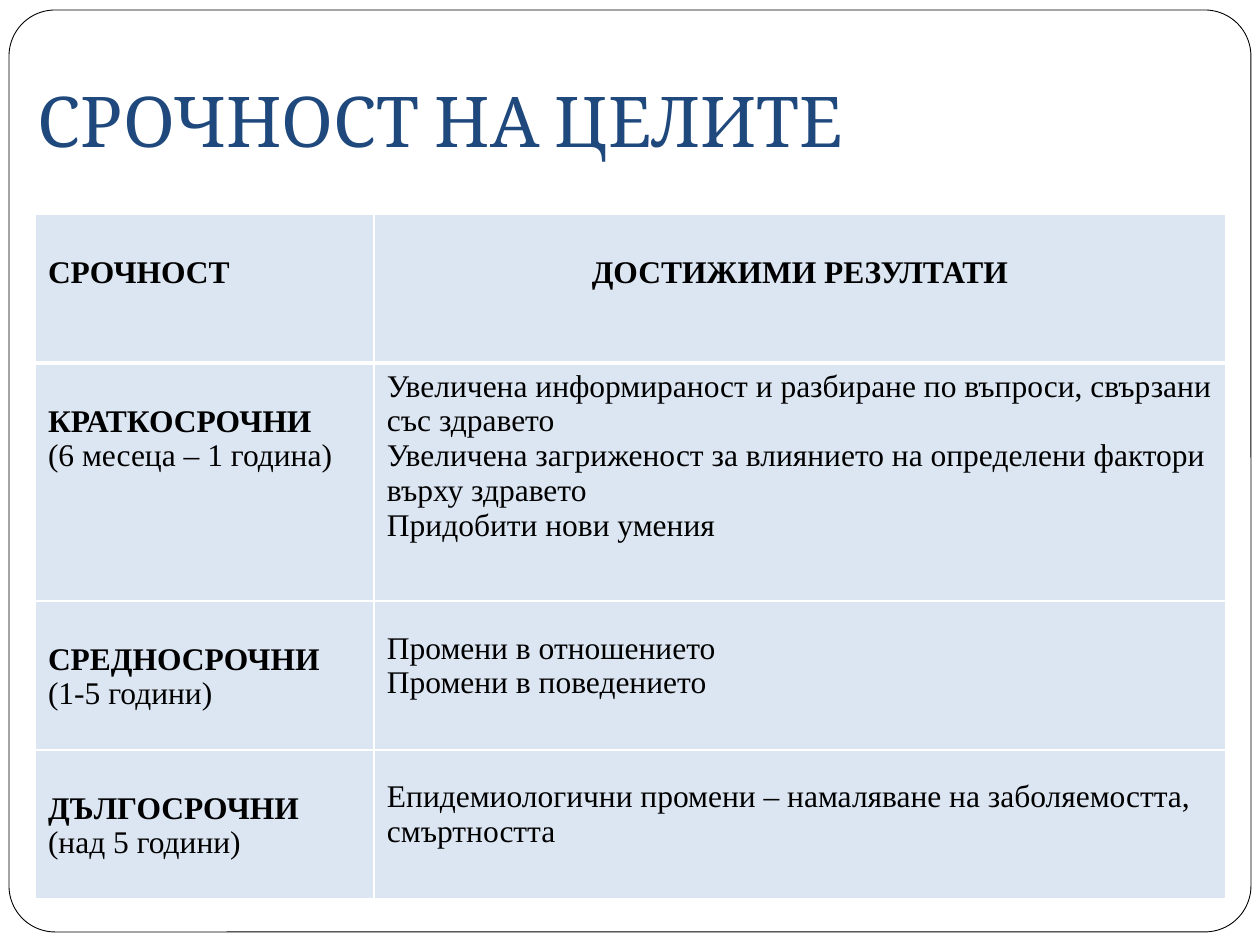
from lxml.etree import SubElement
from pptx import Presentation
from pptx.dml.color import RGBColor
from pptx.enum.shapes import MSO_SHAPE
from pptx.enum.text import MSO_ANCHOR, PP_ALIGN
from pptx.oxml.ns import qn
from pptx.util import Emu, Pt

COLORS = {"white": "FFFFFF", "black": "000000", "title": "1F497D", "cell": "DCE6F2"}


def px(n):
    return Emu(round(n * 914400 / 126))


def add_text(paragraph, text, size, font, color, bold=False):
    run = paragraph.add_run()
    run.text = text
    run.font.size = Pt(size)
    run.font.name = font
    run.font.bold = bold
    run.font.color.rgb = RGBColor.from_string(COLORS[color])


prs = Presentation()
prs.slide_width, prs.slide_height = px(1260), px(945)
slide = prs.slides.add_slide(prs.slide_layouts[6])

# Rounded frame
frame = slide.shapes.add_shape(MSO_SHAPE.ROUNDED_RECTANGLE, px(9), px(10), px(1242), px(922))
frame.adjustments[0] = 0.05
frame.shadow.inherit = False
frame.fill.solid()
frame.fill.fore_color.rgb = RGBColor.from_string(COLORS["white"])
frame.line.color.rgb = RGBColor.from_string(COLORS["black"])
frame.line.width = Pt(0.5)

# Title
title = slide.shapes.add_textbox(px(25), px(55), px(1201), px(119)).text_frame
title.word_wrap = True
title.vertical_anchor = MSO_ANCHOR.BOTTOM
title.margin_left = title.margin_right = title.margin_bottom = px(13)
title.margin_top = px(6)
add_text(title.paragraphs[0], "СРОЧНОСТ НА ЦЕЛИТЕ", 40, "Cambria", "title")

# Each row: term lines, result lines, top margin of the results
rows = [
    (["СРОЧНОСТ"], ["ДОСТИЖИМИ РЕЗУЛТАТИ"], 41),
    (["КРАТКОСРОЧНИ", "(6 месеца – 1 година)"],
     ["Увеличена информираност и разбиране по въпроси, свързани със здравето",
      "Увеличена загриженост за влиянието на определени фактори върху здравето",
      "Придобити нови умения"], 6),
    (["СРЕДНОСРОЧНИ", "(1-5 години)"],
     ["Промени в отношението", "Промени в поведението"], 30),
    (["ДЪЛГОСРОЧНИ", "(над 5 години)"],
     ["Епидемиологични промени – намаляване на заболяемостта, смъртността"], 30),
]
term_margin = 41

# Table grid
table = slide.shapes.add_table(len(rows), 2, px(35), px(214), px(1191), px(685)).table
for column, width in zip(table.columns, (339, 852)):
    column.width = px(width)
for row, height in zip(table.rows, (149, 238, 149, 149)):
    row.height = px(height)

# Cells: borders, fill and text
for r, (term, results, results_margin) in enumerate(rows):
    for c, (lines, margin) in enumerate([(term, term_margin), (results, results_margin)]):
        cell = table.cell(r, c)
        cell.margin_left = cell.margin_right = px(13)
        cell.margin_top, cell.margin_bottom = px(margin), px(6)
        properties = cell._tc.get_or_add_tcPr()
        for side in ("L", "R", "T", "B"):
            header_rule = (r, side) in ((0, "B"), (1, "T"))
            border = SubElement(properties, qn(f"a:ln{side}"), w=str(Pt(3 if header_rule else 1)))
            SubElement(SubElement(border, qn("a:solidFill")), qn("a:srgbClr"), val=COLORS["white"])
        cell.fill.solid()
        cell.fill.fore_color.rgb = RGBColor.from_string(COLORS["cell"])
        for i, line in enumerate(lines):
            paragraph = cell.text_frame.add_paragraph() if i else cell.text_frame.paragraphs[0]
            paragraph.alignment = PP_ALIGN.CENTER if (r, c) == (0, 1) else PP_ALIGN.LEFT
            bold = r == 0 or (c == 0 and i == 0)
            add_text(paragraph, line, 18, "Times New Roman", "black", bold)

prs.save("out.pptx")
